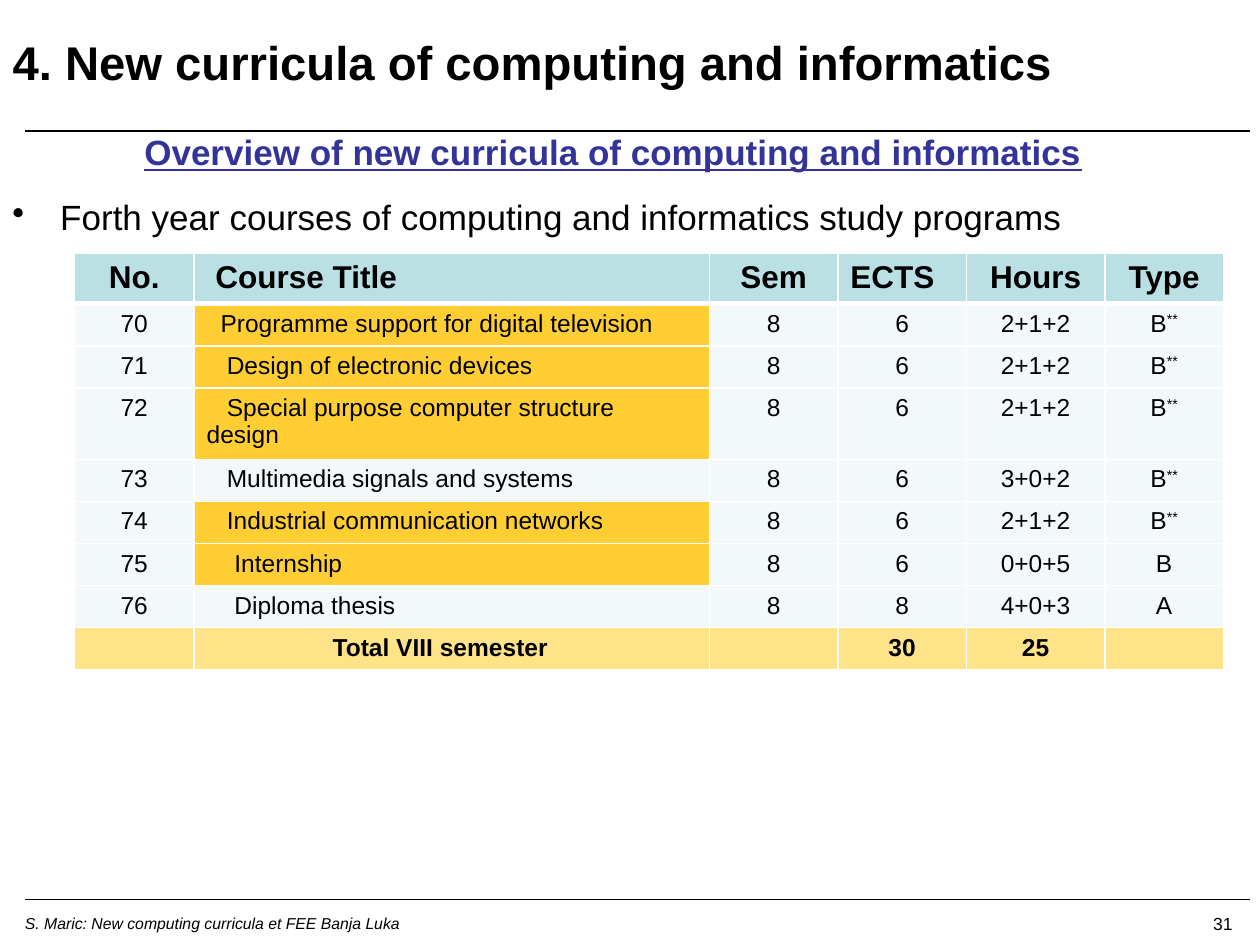
import pptx
import pptx.util
import pptx.dml.color
import pptx.enum.shapes
import pptx.enum.text
from lxml import etree

Inches, Pt = pptx.util.Inches, pptx.util.Pt
RGBColor = pptx.dml.color.RGBColor
Align = pptx.enum.text.PP_ALIGN
Anchor = pptx.enum.text.MSO_ANCHOR

BLACK = RGBColor(0x00, 0x00, 0x00)
INDIGO = RGBColor(0x33, 0x33, 0x99)
HEADER_TEAL = RGBColor(0xBB, 0xE0, 0xE3)
PALE_BLUE = RGBColor(0xF3, 0xF9, 0xFA)
GOLD = RGBColor(0xFF, 0xCE, 0x33)
PALE_GOLD = RGBColor(0xFF, 0xE3, 0x89)
NAMESPACE = "{http://schemas.openxmlformats.org/drawingml/2006/main}"


def format_paragraph(paragraph, size, color=BLACK, bold=False, align=Align.LEFT):
    paragraph.alignment = align
    font = paragraph.font
    font.name, font.size, font.bold = "Arial", Pt(size), bold
    font.color.rgb = color


def add_border(cell, position, side, width):
    """Give one side of a cell a white line; position keeps the sides in schema order."""
    line = etree.Element(NAMESPACE + side, w=str(Pt(width)))
    fill = etree.SubElement(line, NAMESPACE + "solidFill")
    etree.SubElement(fill, NAMESPACE + "srgbClr", val="FFFFFF")
    cell._tc.get_or_add_tcPr().insert(position, line)


presentation = pptx.Presentation()
presentation.slide_width, presentation.slide_height = Inches(10), Inches(7.5)
slide = presentation.slides.add_slide(presentation.slide_layouts[5])

# Rules above the content and above the footer
for y in (1.04, 7.14):
    rule = slide.shapes.add_connector(
        pptx.enum.shapes.MSO_CONNECTOR.STRAIGHT,
        Inches(0.2), Inches(y), Inches(9.92), Inches(y))
    rule.line.color.rgb = BLACK
    rule.line.width = Pt(0.75)
    etree.SubElement(rule._element.spPr, NAMESPACE + "effectLst")

# Title
title = slide.shapes.title
title.left, title.top, title.width, title.height = (
    Inches(0), Inches(0.21), Inches(8.54), Inches(0.56))
title.text_frame.text = "4. New curricula of computing and informatics"
title.text_frame.vertical_anchor = Anchor.MIDDLE
format_paragraph(title.text_frame.paragraphs[0], 27, bold=True)

# Footer and slide number
for text, left, width, size, align, italic in (
    ("S. Maric: New computing curricula et FEE Banja Luka", 0.1, 7.17, 9, Align.LEFT, True),
    ("31", 8.15, 1.73, 10, Align.RIGHT, False),
):
    footer = slide.shapes.add_textbox(Inches(left), Inches(7.2), Inches(width), Inches(0.25))
    footer.text_frame.word_wrap = True
    footer.text_frame.text = text
    paragraph = footer.text_frame.paragraphs[0]
    format_paragraph(paragraph, size, align=align)
    paragraph.font.italic = italic

# Subtitle and bullet
body = slide.shapes.add_textbox(Inches(0), Inches(0.99), Inches(9.73), Inches(1))
body.text_frame.word_wrap = True
subtitle = body.text_frame.paragraphs[0]
subtitle.text = "Overview of new curricula of computing and informatics"
format_paragraph(subtitle, 20, INDIGO, True, Align.CENTER)
subtitle.font.underline = True
subtitle.space_after = Pt(13)
bullet = body.text_frame.add_paragraph()
bullet.text = "Forth year courses of computing and informatics study programs"
properties = bullet._p.get_or_add_pPr()
properties.set("marL", str(Inches(0.38)))
properties.set("indent", str(-Inches(0.38)))
etree.SubElement(properties, NAMESPACE + "buChar", char="•")
format_paragraph(bullet, 20)

# Course table: cell texts, first-line indent of the course title, its fill
STARRED = "B**"
courses = [
    (("No.", "Course Title", "Sem", "ECTS", "Hours", "Type"), 0.07, HEADER_TEAL),
    (("70", "Programme support for digital television", "8", "6", "2+1+2", STARRED), 0.11, GOLD),
    (("71", "Design of electronic devices", "8", "6", "2+1+2", STARRED), 0.16, GOLD),
    (("72", "Special purpose computer structure design", "8", "6", "2+1+2", STARRED), 0.16, GOLD),
    (("73", "Multimedia signals and systems", "8", "6", "3+0+2", STARRED), 0.16, PALE_BLUE),
    (("74", "Industrial communication networks", "8", "6", "2+1+2", STARRED), 0.16, GOLD),
    (("75", "Internship", "8", "6", "0+0+5", "B"), 0.22, GOLD),
    (("76", "Diploma thesis", "8", "8", "4+0+3", "A"), 0.22, PALE_BLUE),
    (("", "Total VIII semester", "", "30", "25", ""), 1, PALE_GOLD),
]
column_widths = (0.95, 4.09, 1.02, 1.02, 1.1, 0.94)
row_heights = (0.37, 0.32, 0.32, 0.54, 0.32, 0.32, 0.32, 0.32, 0.32)
TITLE_COLUMN, ECTS_COLUMN = 1, 3
last_row = len(courses) - 1

table = slide.shapes.add_table(
    len(courses), len(column_widths), Inches(0.59), Inches(2.01),
    Inches(sum(column_widths)), Inches(sum(row_heights))).table
table.first_row = table.horz_banding = False
for column, width in zip(table.columns, column_widths):
    column.width = Inches(width)
for row, height in zip(table.rows, row_heights):
    row.height = Inches(height)

for r, (texts, indent, title_fill) in enumerate(courses):
    for c, text in enumerate(texts):
        cell = table.cell(r, c)
        cell.fill.solid()
        whole_row = r in (0, last_row)
        cell.fill.fore_color.rgb = title_fill if whole_row or c == TITLE_COLUMN else PALE_BLUE
        for position, side in enumerate(("lnL", "lnR", "lnT", "lnB")):
            header_edge = (r, side) in ((0, "lnB"), (1, "lnT"))
            add_border(cell, position, side, 3 if header_edge else 1)

        paragraph = cell.text_frame.paragraphs[0]
        left_aligned = c == TITLE_COLUMN or (r, c) == (0, ECTS_COLUMN)
        if text == STARRED:
            paragraph.add_run().text = "B"
            stars = paragraph.add_run()
            stars.text = "**"
            stars._r.get_or_add_rPr().set("baseline", "30000")
        elif text:
            paragraph.text = text
        else:
            cell.margin_top = cell.margin_bottom = 0
        if c == TITLE_COLUMN:
            cell.margin_right = Inches(0.2)
            paragraph._p.get_or_add_pPr().set("indent", str(Inches(indent)))
        format_paragraph(paragraph, 18 if r == 0 else 14, bold=whole_row,
                         align=Align.LEFT if left_aligned else Align.CENTER)

presentation.save("out.pptx")
